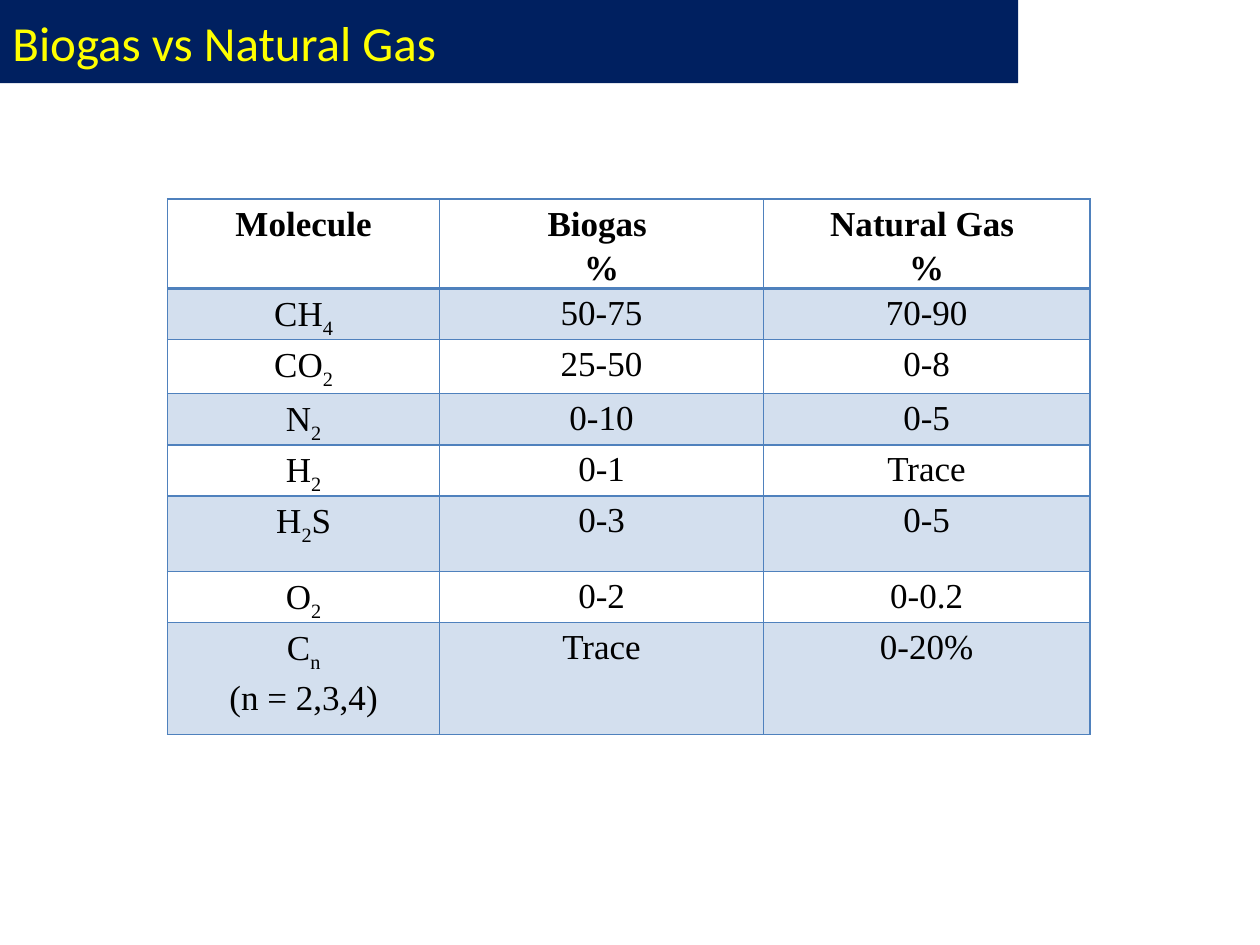
from dataclasses import dataclass

from lxml.etree import SubElement
from pptx import Presentation
from pptx.dml.color import RGBColor as RGB
from pptx.enum.shapes import MSO_SHAPE as SHAPE
from pptx.enum.text import MSO_ANCHOR as ANCHOR, PP_ALIGN as ALIGN
from pptx.oxml.ns import qn
from pptx.util import Inches, Pt


@dataclass(frozen=True)
class Theme:
    """Colours, fonts and sizes of the slide."""
    banner: str = "002060"
    title: str = "FFFF00"
    text: str = "000000"
    band: str = "D3DFEE"
    border: str = "4F81BD"
    title_font: str = "Calibri"
    table_font: str = "Times New Roman"
    title_size: int = 28
    table_size: int = 20
    thin: float = 1
    thick: float = 2.25


THEME = Theme()
TITLE = "Biogas vs Natural Gas"
COLUMNS = [2.16, 2.57, 2.59]
HEIGHTS = [0.6, 0.3, 0.43, 0.3, 0.3, 0.6, 0.3, 0.89]
ROWS = [
    ("Molecule", "Biogas \n%", "Natural Gas \n%"),
    ("CH_4", "50-75", "70-90"),
    ("CO_2", "25-50", "0-8"),
    ("N_2", "0-10", "0-5"),
    ("H_2", "0-1", "Trace"),
    ("H_2_S", "0-3", "0-5"),
    ("O_2", "0-2", "0-0.2"),
    ("C_n\n(n = 2,3,4)", "Trace", "0-20%"),
]


def apply(obj, formats):
    """Set each attribute of obj from a dict of values."""
    for name, value in formats.items():
        setattr(obj, name, value)


def add_run(p, text, color, **formats):
    """Append a formatted run to a paragraph and return it."""
    r = p.add_run()
    r.text = text
    apply(r.font, formats)
    r.font.color.rgb = RGB.from_string(color)
    return r


def write_cell(tf, text, bold):
    """Write lines in which underscores switch subscript on and off."""
    for i, line in enumerate(text.split("\n")):
        p = tf.add_paragraph() if i else tf.paragraphs[0]
        apply(p, {"alignment": ALIGN.CENTER, "line_spacing": 1.15})
        for j, part in enumerate(line.split("_")):
            r = add_run(p, part, THEME.text, name=THEME.table_font,
                        size=Pt(THEME.table_size), bold=bold)
            if j % 2:
                r.font._element.set("baseline", "-25000")


def set_borders(cell, widths):
    """Draw the four cell borders from a dict of side to width."""
    tc_pr = cell._tc.get_or_add_tcPr()
    for side, width in widths.items():
        ln = SubElement(tc_pr, qn(f"a:ln{side}"), w=str(Pt(width)))
        fill = SubElement(ln, qn("a:solidFill"))
        SubElement(fill, qn("a:srgbClr"), val=THEME.border)


def add_banner(slide, left, top, width, height):
    """Place the title banner in the given box."""
    sp = slide.shapes.add_shape(SHAPE.RECTANGLE, left, top, width, height)
    sp.shadow.inherit = False
    sp.fill.solid()
    sp.fill.fore_color.rgb = RGB.from_string(THEME.banner)
    sp.line.fill.background()
    tf = sp.text_frame
    apply(tf, {"word_wrap": True, "vertical_anchor": ANCHOR.MIDDLE})
    p = tf.paragraphs[0]
    p.alignment = ALIGN.LEFT
    add_run(p, TITLE, THEME.title, name=THEME.title_font, size=Pt(THEME.title_size))


def add_gas_table(slide, left, top, width, height):
    """Place the gas composition table in the given box."""
    table = slide.shapes.add_table(len(ROWS), len(COLUMNS), left, top, width, height).table
    apply(table, {"first_row": False, "horz_banding": False})
    for column, share in zip(table.columns, COLUMNS):
        column.width = int(width * share / sum(COLUMNS))
    for row, row_height in zip(table.rows, HEIGHTS):
        row.height = Inches(row_height)
    margins = {"margin_left": Inches(0.07), "margin_right": Inches(0.07),
               "margin_top": 0, "margin_bottom": 0}
    for i, texts in enumerate(ROWS):
        widths = {"L": THEME.thin, "R": THEME.thin,
                  "T": THEME.thick if i == 1 else THEME.thin,
                  "B": THEME.thick if i == 0 else THEME.thin}
        for j, text in enumerate(texts):
            cell = table.cell(i, j)
            apply(cell, margins)
            write_cell(cell.text_frame, text, bold=i == 0)
            set_borders(cell, widths)
            if i % 2:
                cell.fill.solid()
                cell.fill.fore_color.rgb = RGB.from_string(THEME.band)
            else:
                cell.fill.background()


def main():
    """Build and save the slide."""
    prs = Presentation()
    apply(prs, {"slide_width": Inches(10), "slide_height": Inches(7.5)})
    slide = prs.slides.add_slide(prs.slide_layouts[6])
    add_gas_table(slide, Inches(1.33), Inches(1.58), Inches(7.32), Inches(sum(HEIGHTS)))
    add_banner(slide, 0, 0, Inches(8.08), Inches(0.66))
    prs.save("out.pptx")


if __name__ == "__main__":
    main()
